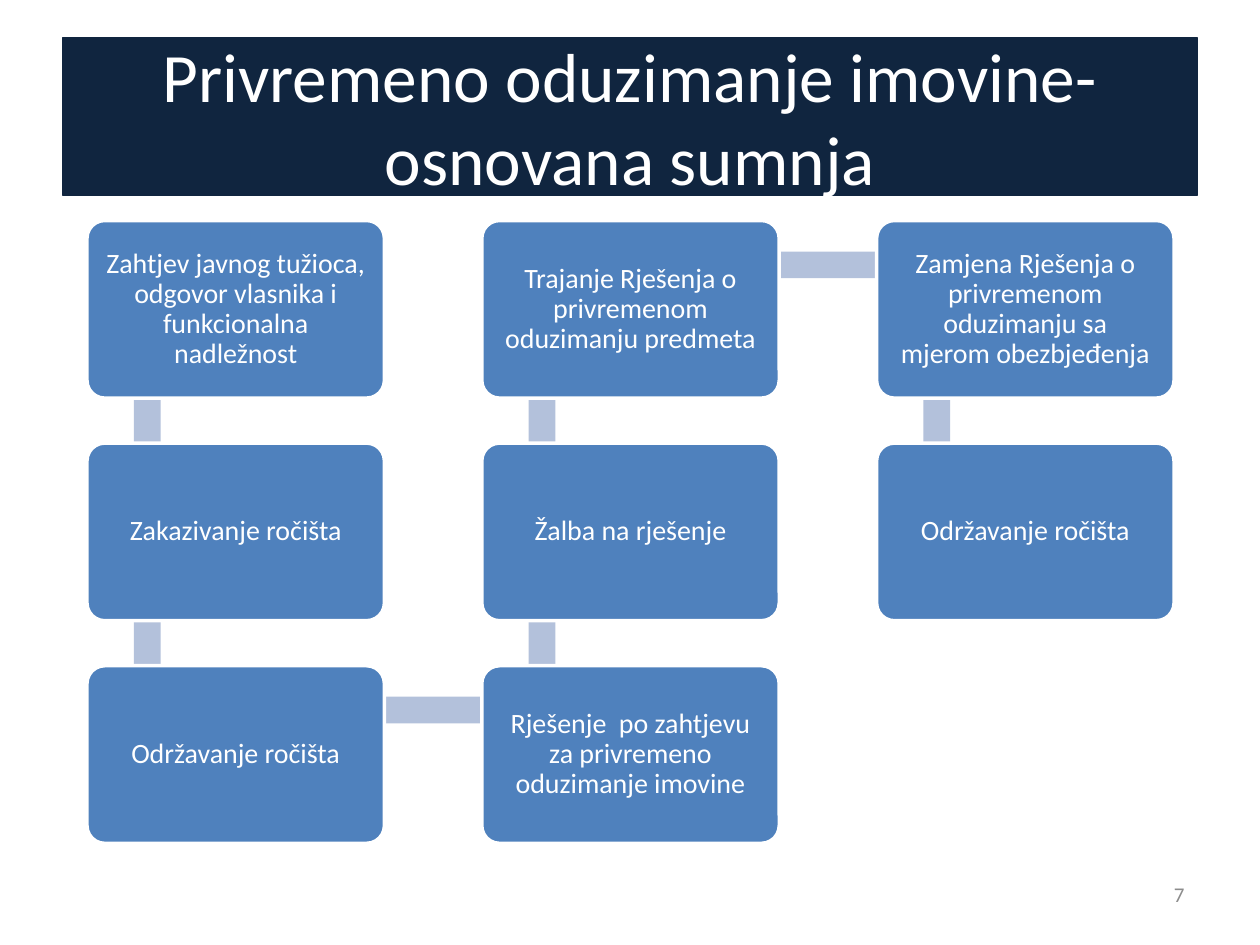
from dataclasses import dataclass
from itertools import pairwise
from math import atan2, degrees, hypot

from pptx import Presentation
from pptx.dml.color import RGBColor
from pptx.enum.shapes import MSO_SHAPE
from pptx.enum.text import MSO_ANCHOR, PP_ALIGN
from pptx.shapes.autoshape import Shape
from pptx.slide import Slide
from pptx.util import Pt


@dataclass(frozen=True)
class Theme:
    font: str = "Calibri"
    navy: RGBColor = RGBColor(0x10, 0x25, 0x3F)
    blue: RGBColor = RGBColor(0x4F, 0x81, 0xBD)
    pale_blue: RGBColor = RGBColor(0xB3, 0xC1, 0xDB)
    white: RGBColor = RGBColor(0xFF, 0xFF, 0xFF)
    grey: RGBColor = RGBColor(0x8C, 0x8C, 0x8C)
    title_size: float = 39.6
    step_size: float = 16
    number_size: float = 12


@dataclass(frozen=True)
class Box:
    left: float
    top: float
    width: float
    height: float


@dataclass(frozen=True)
class Step:
    column: int
    row: int
    text: str

    @property
    def box(self) -> Box:
        return Box(49.7 + 225.6 * self.column, 126 + 127.2 * self.row, 170, 101.5)


THEME = Theme()
LINK_THICKNESS = 15.3
LINK_OFFSET_X = 34.4
LINK_OFFSET_Y = 25.4
STEPS = [
    Step(0, 0, "Zahtjev javnog tužioca, odgovor vlasnika i funkcionalna nadležnost"),
    Step(0, 1, "Zakazivanje ročišta"),
    Step(0, 2, "Održavanje ročišta"),
    Step(1, 2, "Rješenje  po zahtjevu za privremeno oduzimanje imovine"),
    Step(1, 1, "Žalba na rješenje"),
    Step(1, 0, "Trajanje Rješenja o privremenom oduzimanju predmeta"),
    Step(2, 0, "Zamjena Rješenja o privremenom oduzimanju sa mjerom obezbjeđenja"),
    Step(2, 1, "Održavanje ročišta"),
]


def add_block(slide: Slide, kind: MSO_SHAPE, box: Box, fill: RGBColor) -> Shape:
    shape = slide.shapes.add_shape(
        kind, Pt(box.left), Pt(box.top), Pt(box.width), Pt(box.height)
    )
    shape.shadow.inherit = False
    shape.fill.solid()
    shape.fill.fore_color.rgb = fill
    shape.line.fill.background()
    return shape


def set_outline(shape: Shape, color: RGBColor, width: float) -> None:
    shape.line.color.rgb = color
    shape.line.width = Pt(width)


def write_text(
    shape: Shape,
    text: str,
    size: float,
    color: RGBColor,
    alignment: PP_ALIGN = PP_ALIGN.CENTER,
    line_spacing: float = 1.0,
) -> None:
    frame = shape.text_frame
    frame.word_wrap = True
    frame.vertical_anchor = MSO_ANCHOR.MIDDLE
    paragraph = frame.paragraphs[0]
    paragraph.text = text
    paragraph.alignment = alignment
    paragraph.line_spacing = line_spacing
    paragraph.font.name = THEME.font
    paragraph.font.size = Pt(size)
    paragraph.font.color.rgb = color


def add_title(slide: Slide, text: str) -> None:
    shape = add_block(slide, MSO_SHAPE.RECTANGLE, Box(36, 21.6, 648, 90), THEME.navy)
    set_outline(shape, THEME.navy, 0.75)
    write_text(shape, text, THEME.title_size, THEME.white)


def add_link(slide: Slide, start: Box, end: Box) -> None:
    across, down = end.left - start.left, end.top - start.top
    length = hypot(across, down)
    center_x = (start.left + end.left) / 2 + LINK_OFFSET_X
    center_y = (start.top + end.top) / 2 + LINK_OFFSET_Y
    bar = Box(
        center_x - length / 2, center_y - LINK_THICKNESS / 2, length, LINK_THICKNESS
    )
    shape = add_block(slide, MSO_SHAPE.RECTANGLE, bar, THEME.pale_blue)
    shape.rotation = degrees(atan2(down, across))


def add_step(slide: Slide, step: Step) -> None:
    shape = add_block(slide, MSO_SHAPE.ROUNDED_RECTANGLE, step.box, THEME.blue)
    shape.adjustments[0] = 0.1
    set_outline(shape, THEME.white, 2)
    frame = shape.text_frame
    frame.margin_left = frame.margin_right = Pt(8)
    frame.margin_top = frame.margin_bottom = Pt(8)
    write_text(shape, step.text, THEME.step_size, THEME.white, line_spacing=0.9)


def add_slide_number(slide: Slide, number: str) -> None:
    shape = slide.shapes.add_textbox(Pt(516), Pt(496.8), Pt(168), Pt(28.8))
    write_text(shape, number, THEME.number_size, THEME.grey, PP_ALIGN.RIGHT)


def main() -> None:
    presentation = Presentation()
    presentation.slide_width = Pt(720)
    presentation.slide_height = Pt(540)
    slide = presentation.slides.add_slide(presentation.slide_layouts[6])
    add_slide_number(slide, "7")
    add_title(slide, "Privremeno oduzimanje imovine- osnovana sumnja")
    for start, end in pairwise(STEPS):
        add_link(slide, start.box, end.box)
    for step in STEPS:
        add_step(slide, step)
    presentation.save("out.pptx")


if __name__ == "__main__":
    main()
